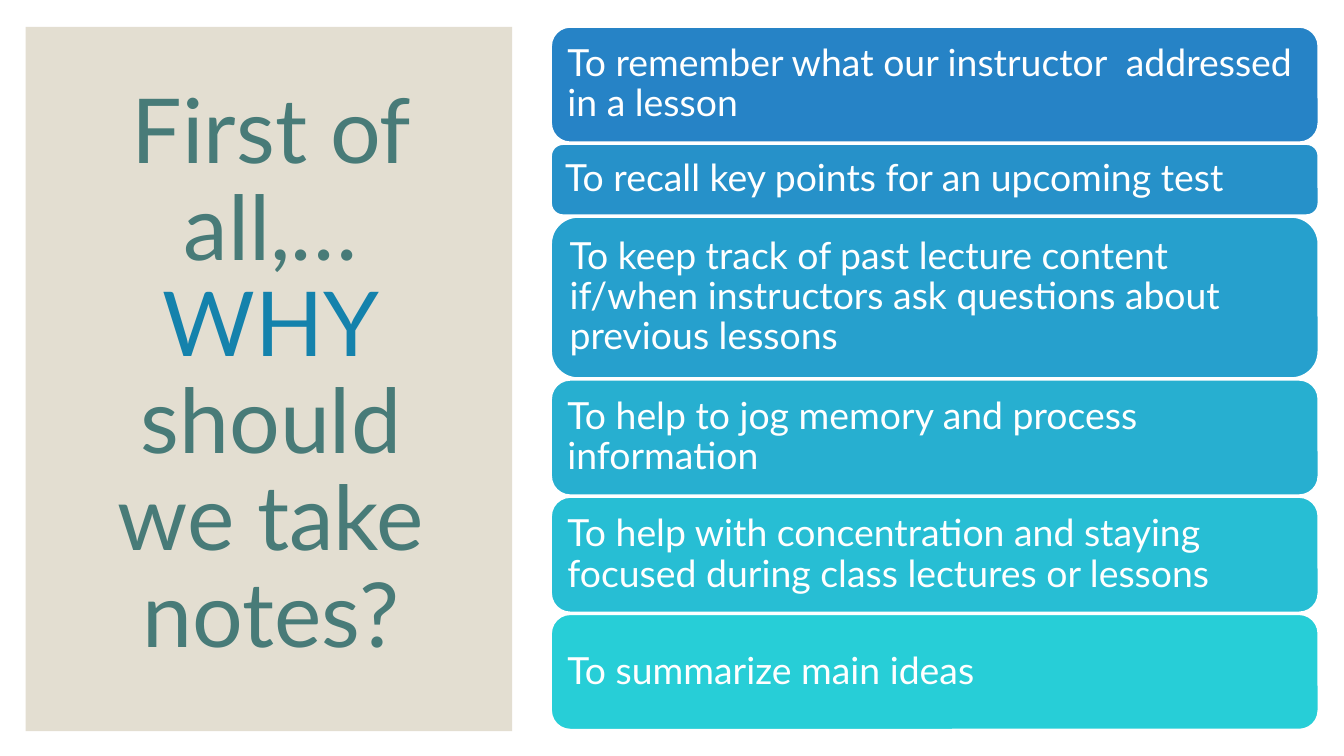
"""Build a slide that asks why we take notes and lists six reasons."""
from typing import NamedTuple

from pptx import Presentation
from pptx.dml.color import RGBColor
from pptx.enum import shapes, text
from pptx import util as u


class Box(NamedTuple):
    left: float
    top: float
    width: float
    height: float


class Reason(NamedTuple):
    words: str
    height: float
    fill: str


class Part(NamedTuple):
    words: str
    color: str


SIZE = Box(0, 0, 10, 10 * 9 / 16)
PANEL = Box(0.19, 0.2, 3.62, 5.24)
TITLE = Box(0.47, 0.46, 3.09, 4.68)
LIST = Box(4.1, 0.2, 5.71, 5.23)
WHITE, SAND, TEAL, BLUE = "FFFFFF", "E3DED1", "487B78", "1482AC"
HEADING = [
    [Part("First of all,…", TEAL)],
    [Part("WHY", BLUE), Part(" should we take notes?", TEAL)],
]
REASONS = [
    Reason("To remember what our instructor  addressed in a lesson", 0.86, "2683C6"),
    Reason("To recall key points for an upcoming test", 0.53, "2691C9"),
    Reason("To keep track of past lecture content if/when instructors ask "
           "questions about previous lessons", 1.2, "26A0CD"),
    Reason("To help to jog memory and process information", 0.86, "27AFD0"),
    Reason("To help with concentration and staying focused during class "
           "lectures or lessons", 0.86, "27BED4"),
    Reason("To summarize main ideas", 0.86, "27CED7"),
]
FRAME = {"word_wrap": True, "vertical_anchor": text.MSO_ANCHOR.MIDDLE}
INSET = {f"margin_{side}": u.Inches(0.08) for side in ("left", "top", "right", "bottom")}


def apply(target, values: dict) -> None:
    for name, value in values.items():
        setattr(target, name, value)


def color(form, code: str) -> None:
    form.solid()
    form.fore_color.rgb = RGBColor.from_string(code)


def place(box: Box) -> list[u.Length]:
    return [u.Inches(side) for side in box]


def draw_shape(slide, kind, box: Box, fill: str):
    shape = slide.shapes.add_shape(kind, *place(box))
    shape.shadow.inherit = False
    color(shape.fill, fill)
    shape.line.fill.background()
    return shape


def write(frame, lines: list[list[Part]], size: int, align) -> None:
    apply(frame, FRAME)
    para = frame.paragraphs[0]
    apply(para, {"alignment": align, "line_spacing": 0.9})
    for row, parts in enumerate(lines):
        if row:
            para.add_line_break()
        for part in parts:
            run = para.add_run()
            run.text = part.words
            apply(run.font, {"name": "Lato", "size": u.Pt(size)})
            color(run.font.fill, part.color)


def draw_list(slide, reasons: list[Reason], area: Box) -> None:
    gap = (area.height - sum(item.height for item in reasons)) / (len(reasons) - 1)
    top = area.top
    for item in reasons:
        box = Box(area.left, top, area.width, item.height)
        card = draw_shape(slide, shapes.MSO_SHAPE.ROUNDED_RECTANGLE, box, item.fill)
        color(card.line.fill, WHITE)
        card.line.width = u.Pt(1)
        apply(card.text_frame, INSET)
        write(card.text_frame, [[Part(item.words, WHITE)]], 20, text.PP_ALIGN.LEFT)
        top += item.height + gap


def main() -> None:
    deck = Presentation()
    apply(deck, {"slide_width": u.Inches(SIZE.width), "slide_height": u.Inches(SIZE.height)})
    slide = deck.slides.add_slide(deck.slide_layouts[6])
    for box, fill in ((SIZE, WHITE), (PANEL, SAND)):
        draw_shape(slide, shapes.MSO_SHAPE.RECTANGLE, box, fill)
    title = slide.shapes.add_textbox(*place(TITLE))
    write(title.text_frame, HEADING, 48, text.PP_ALIGN.CENTER)
    draw_list(slide, REASONS, LIST)
    deck.save("out.pptx")


if __name__ == "__main__":
    main()
